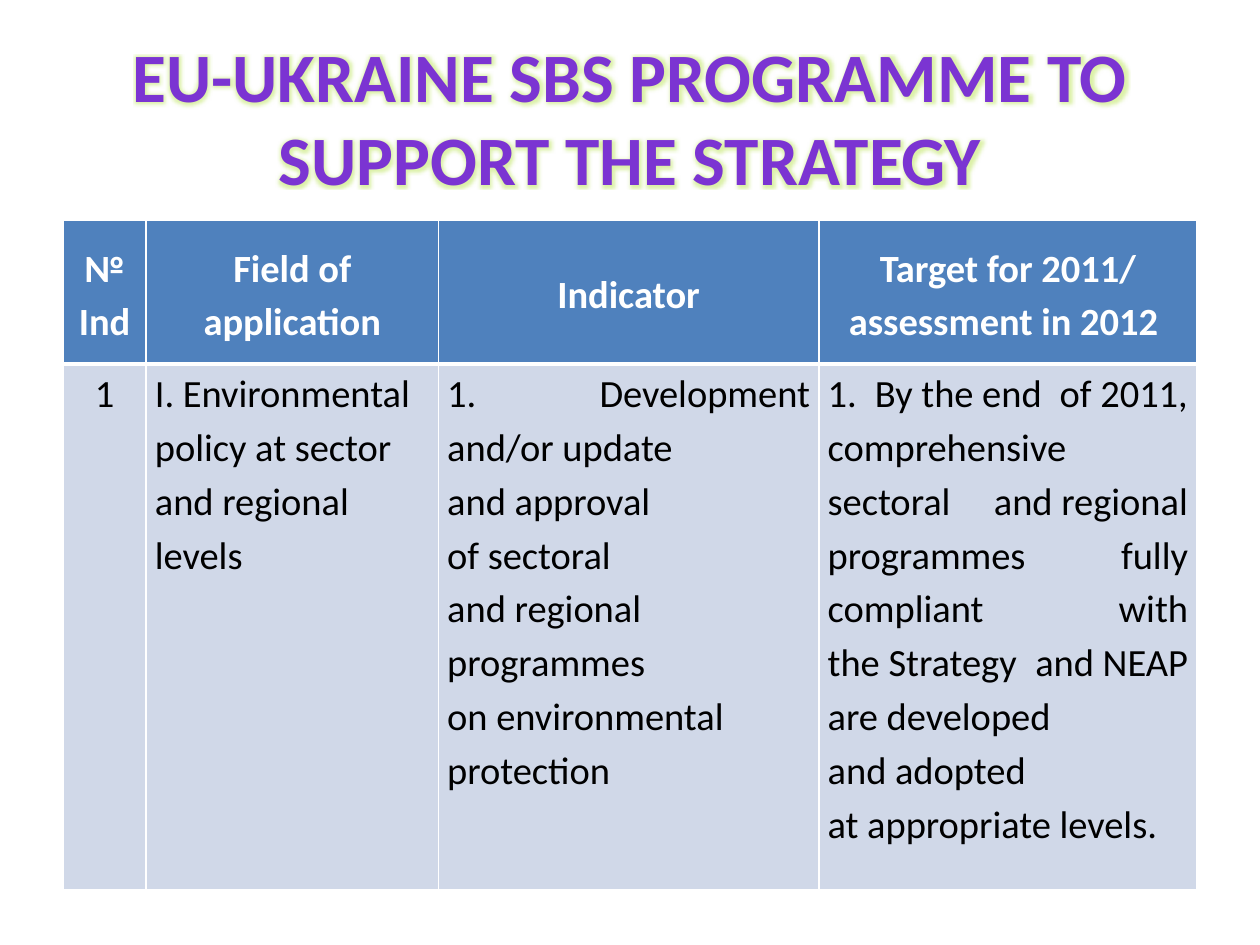
from dataclasses import dataclass

from lxml.etree import SubElement
from pptx import Presentation
from pptx.dml.color import RGBColor
from pptx.enum.text import MSO_ANCHOR as Anchor, PP_ALIGN as Align
from pptx.oxml import parse_xml
from pptx.oxml.ns import nsdecls, qn
from pptx.util import Inches, Pt


@dataclass(frozen=True)
class Theme:
    """Colours, font and type sizes of the slide."""
    font: str = "Calibri"
    title_size: float = 39.6
    table_size: float = 22
    title_stops: tuple = ((0, "3D1B67"), (43, "7B34D2"), (48, "7330C4"), (100, "3D1B67"))
    title_outline: str = "5E457C"
    title_glow: str = "B2E040"
    header_fill: str = "4F81BD"
    header_text: str = "FFFFFF"
    body_fill: str = "D0D8E8"
    body_text: str = "000000"
    border: str = "FFFFFF"


THEME = Theme()
TIE = "~"
NO_BREAK_SPACE = chr(160)
TITLE = "EU-UKRAINE SBS PROGRAMME TO SUPPORT THE STRATEGY"
COLUMN_WIDTHS = (0.66, 2.32, 3.02, 3)
ROW_HEIGHTS = (1.14, 4.17)
HEADERS = ("№ Ind", "Field of application", "Indicator", "Target for 2011/ assessment in 2012 ")
BODY = (
    ("1", Align.CENTER),
    ("I. Environmental policy at~sector and~regional levels", Align.LEFT),
    ("1. Development and/or~update and~approval of~sectoral and~regional programmes "
     "on~environmental protection", Align.JUSTIFY),
    ("1. By~the~end of~2011, comprehensive sectoral and~regional programmes fully compliant "
     "with the~Strategy and~NEAP are~developed and~adopted at~appropriate levels.", Align.JUSTIFY),
)


def add_span(para, text, size, bold):
    """Add one run in the theme font."""
    span = para.add_run()
    span.text = text.replace(TIE, NO_BREAK_SPACE)
    span.font.name = THEME.font
    span.font.size = Pt(size)
    span.font.bold = bold
    return span


def decorate_title(span):
    """Give a run the gradient fill, thin outline and soft glow."""
    stops = "".join(
        f'<a:gs pos="{place * 1000}"><a:srgbClr val="{colour}"/></a:gs>'
        for place, colour in THEME.title_stops
    )
    parts = (
        f'<a:ln {nsdecls("a")} w="{Pt(0.71)}"><a:solidFill>'
        f'<a:srgbClr val="{THEME.title_outline}"/></a:solidFill></a:ln>',
        f'<a:gradFill {nsdecls("a")}><a:gsLst>{stops}</a:gsLst><a:lin ang="5400000"/></a:gradFill>',
        f'<a:effectLst {nsdecls("a")}><a:glow rad="{Pt(4)}"><a:srgbClr val="{THEME.title_glow}">'
        f'<a:alpha val="45000"/></a:srgbClr></a:glow></a:effectLst>',
    )
    properties = span._r.get_or_add_rPr()
    for index, part in enumerate(parts):
        properties.insert(index, parse_xml(part))


def place_title(page, left, top, width, height):
    """Place the slide title in its box."""
    box = page.shapes.title
    box.left, box.top, box.width, box.height = map(Inches, (left, top, width, height))
    frame = box.text_frame
    frame.word_wrap = True
    frame.vertical_anchor = Anchor.MIDDLE
    para = frame.paragraphs[0]
    para.alignment = Align.CENTER
    decorate_title(add_span(para, TITLE, THEME.title_size, True))


def set_borders(cell, top, bottom):
    """Draw the four cell borders, with their widths in points."""
    properties = cell._tc.get_or_add_tcPr()
    for side, width in (("L", 1), ("R", 1), ("T", top), ("B", bottom)):
        line = SubElement(properties, qn(f"a:ln{side}"), w=str(Pt(width)))
        fill = SubElement(line, qn("a:solidFill"))
        SubElement(fill, qn("a:srgbClr"), val=THEME.border)


def fill_cell(cell, text, align, header):
    """Write and style one header or body cell."""
    set_borders(cell, 1 if header else 3, 3 if header else 1)
    cell.fill.solid()
    cell.fill.fore_color.rgb = RGBColor.from_string(THEME.header_fill if header else THEME.body_fill)
    cell.margin_left = cell.margin_right = Inches(0.07)
    cell.margin_top = cell.margin_bottom = 0
    cell.vertical_anchor = Anchor.MIDDLE if header else Anchor.TOP
    para = cell.text_frame.paragraphs[0]
    para.alignment = align
    para.line_spacing = 1.15
    para.space_after = Pt(10)
    span = add_span(para, text, THEME.table_size, header)
    span.font.color.rgb = RGBColor.from_string(THEME.header_text if header else THEME.body_text)


def place_table(page, left, top, width, height):
    """Place the indicator table, sharing its box among columns and rows."""
    frame = page.shapes.add_table(
        len(ROW_HEIGHTS), len(COLUMN_WIDTHS), *map(Inches, (left, top, width, height))
    )
    table = frame.table
    for column, share in zip(table.columns, COLUMN_WIDTHS):
        column.width = Inches(width * share / sum(COLUMN_WIDTHS))
    for row, share in zip(table.rows, ROW_HEIGHTS):
        row.height = Inches(height * share / sum(ROW_HEIGHTS))
    for index, (header, (text, align)) in enumerate(zip(HEADERS, BODY)):
        fill_cell(table.cell(0, index), header, Align.CENTER, True)
        fill_cell(table.cell(1, index), text, align, False)


def main():
    """Build the deck and save it."""
    deck = Presentation()
    deck.slide_width, deck.slide_height = Inches(10), Inches(7.5)
    page = deck.slides.add_slide(deck.slide_layouts[5])
    place_title(page, 0.5, 0.3, 9, 1.25)
    place_table(page, 0.5, 1.75, 9, 5.31)
    deck.save("out.pptx")


if __name__ == "__main__":
    main()
